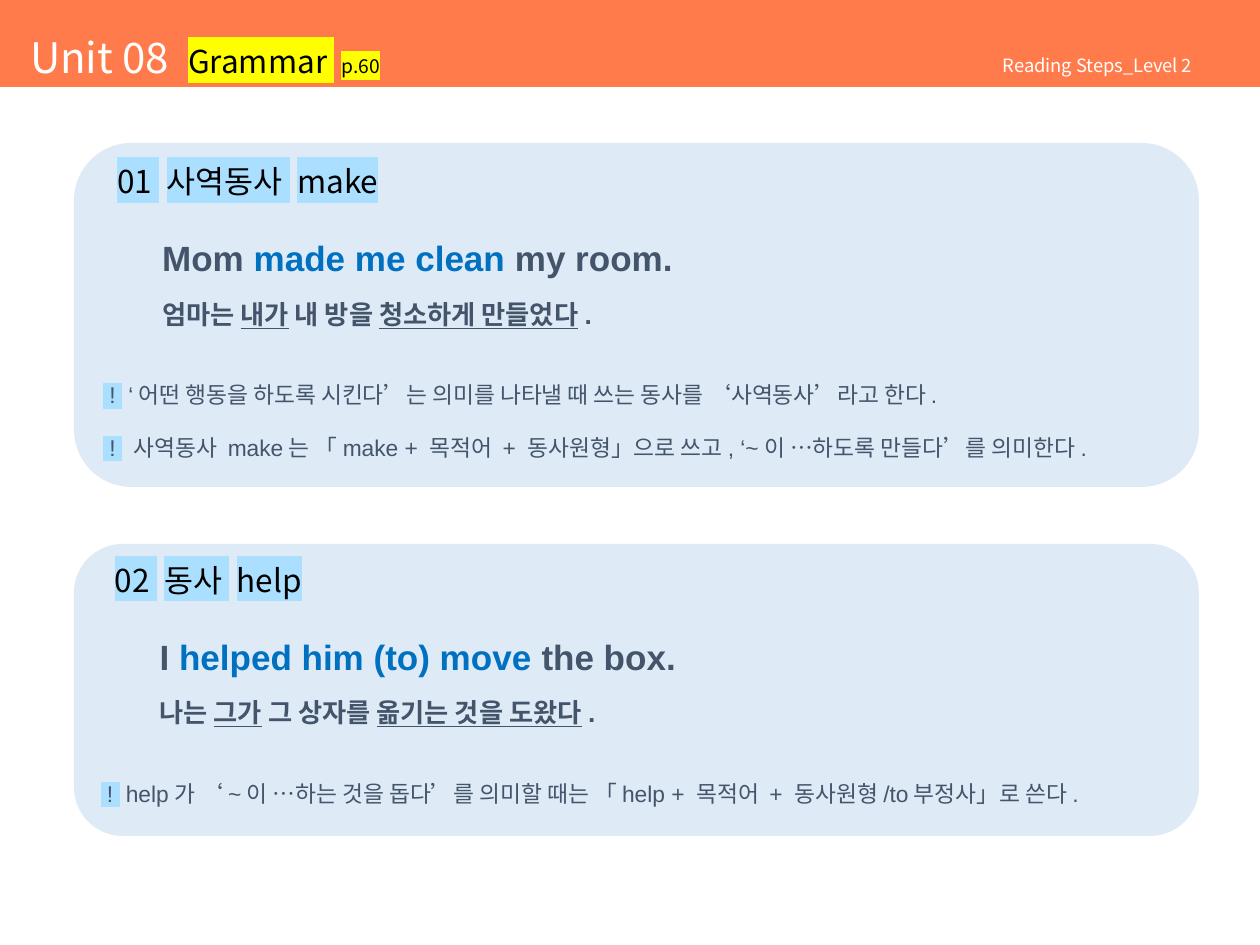
from lxml import etree
from pptx import Presentation
from pptx.dml.color import RGBColor
from pptx.enum.shapes import MSO_SHAPE
from pptx.enum.text import MSO_ANCHOR, MSO_AUTO_SIZE, PP_ALIGN
from pptx.oxml.ns import qn
from pptx.util import Pt

PX = 9144000 // 1260
ROUNDED = MSO_SHAPE.ROUNDED_RECTANGLE
TOP, BOTTOM = MSO_ANCHOR.TOP, MSO_ANCHOR.BOTTOM
LEFT = PP_ALIGN.LEFT
NO_AUTOFIT = MSO_AUTO_SIZE.NONE

KOREAN = "Noto Sans CJK KR"
WHITE, BLACK, SLATE, BLUE = "FFFFFF", "000000", "44546A", "0070C0"
ORANGE, PALE, SKY, YELLOW = "FF7B4B", "DEEBF7", "ABDFFF", "FFFF00"


def rgb(value):
    return RGBColor.from_string(value)


def add_run(paragraph, text, size, color, font=KOREAN, bold=False,
            underline=False, highlight=None, spacing=None):
    run = paragraph.add_run()
    run.text = text
    run.font.size = Pt(size)
    run.font.bold = bold
    run.font.underline = underline
    run.font.color.rgb = rgb(color)
    properties = run.font._element
    if highlight:
        mark = etree.SubElement(properties, qn("a:highlight"))
        etree.SubElement(mark, qn("a:srgbClr"), val=highlight)
    run.font.name = font
    etree.SubElement(properties, qn("a:ea"), typeface=KOREAN)
    if spacing:
        properties.set("spc", str(spacing))


prs = Presentation()
prs.slide_width, prs.slide_height = 1260 * PX, 945 * PX
slide = prs.slides.add_slide(prs.slide_layouts[5])

# Title bar
title = slide.shapes.title
title.left, title.top, title.width, title.height = 0, 0, 1260 * PX, 87 * PX
title.fill.solid()
title.fill.fore_color.rgb = rgb(ORANGE)
frame = title.text_frame
frame.auto_size = NO_AUTOFIT
frame.vertical_anchor = BOTTOM
frame.margin_left, frame.margin_top, frame.margin_bottom = 30 * PX, 0, 4 * PX
heading = frame.paragraphs[0]
heading.alignment = LEFT
heading.line_spacing = 0.9
add_run(heading, "Unit 08", 24, WHITE)
add_run(heading, " ", 24, WHITE, spacing=540)
add_run(heading, "Grammar", 18, BLACK, highlight=YELLOW)
add_run(heading, " ", 18, BLACK, highlight=YELLOW, spacing=400)
add_run(heading, "p.60", 11, BLACK, highlight=YELLOW)

# Series label
series = slide.shapes.add_textbox(994 * PX, 57 * PX, 243 * PX, 33 * PX)
frame = series.text_frame
frame.word_wrap = True
frame.margin_left = frame.margin_right = 9 * PX
frame.margin_top = frame.margin_bottom = 0
frame.paragraphs[0].line_spacing = 0.9
add_run(frame.paragraphs[0], "Reading Steps_Level 2", 10.5, WHITE)

# Grammar panels: top, height, heading, example, translation, notes
panels = [
    (143, 344, "01 사역동사 make",
     ("Mom ", "made me clean", " my room."),
     ("엄마는 ", "내가", " 내 방을 ", "청소하게 만들었다", "."),
     ("‘어떤 행동을 하도록 시킨다’는 의미를 나타낼 때 쓰는 동사를 ‘사역동사’라고 한다.",
      "사역동사 make는 「make + 목적어 + 동사원형」으로 쓰고, ‘~이 …하도록 만들다’를 의미한다.")),
    (544, 292, "02 동사 help",
     ("I ", "helped him (to) move ", "the box."),
     ("나는 ", "그가", " 그 상자를 ", "옮기는 것을 도왔다", "."),
     ("help가 ‘~이 …하는 것을 돕다’를 의미할 때는 「help + 목적어 + 동사원형/to부정사」로 쓴다.",)),
]

for top, height, topic, example, translation, notes in panels:
    panel = slide.shapes.add_shape(ROUNDED, 74 * PX, top * PX, 1125 * PX, height * PX)
    panel.shadow.inherit = False
    panel.adjustments[0] = 0.167
    panel.fill.solid()
    panel.fill.fore_color.rgb = rgb(PALE)
    panel.line.fill.background()
    frame = panel.text_frame
    frame.word_wrap = True
    frame.vertical_anchor = TOP
    frame.margin_top = frame.margin_bottom = 0

    # Line layout: indent in px, line height and space before in points
    layout = [(14, 23, 0), (59, 24, 21), (59, 20, 9), (0, 20, 25), (0, 20, 10)]
    lines = []
    for indent, line_height, gap in layout[:3 + len(notes)]:
        line = frame.add_paragraph() if lines else frame.paragraphs[0]
        line.alignment = LEFT
        line.line_spacing = Pt(line_height)
        line.space_before = Pt(gap)
        line._p.get_or_add_pPr().set("marL", str(indent * PX))
        lines.append(line)

    add_run(lines[0], topic, 18, BLACK, highlight=SKY)
    for part, color in zip(example, (SLATE, BLUE, SLATE)):
        add_run(lines[1], part, 20, color, "Arial", bold=True)
    for i, part in enumerate(translation):
        add_run(lines[2], part, 15, SLATE, "Arial", bold=True, underline=i % 2 == 1)
    for line, note in zip(lines[3:], notes):
        add_run(line, " ! ", 13, SLATE, "Arial", highlight=SKY)
        add_run(line, " " + note, 13, SLATE, "Arial")

prs.save("out.pptx")
